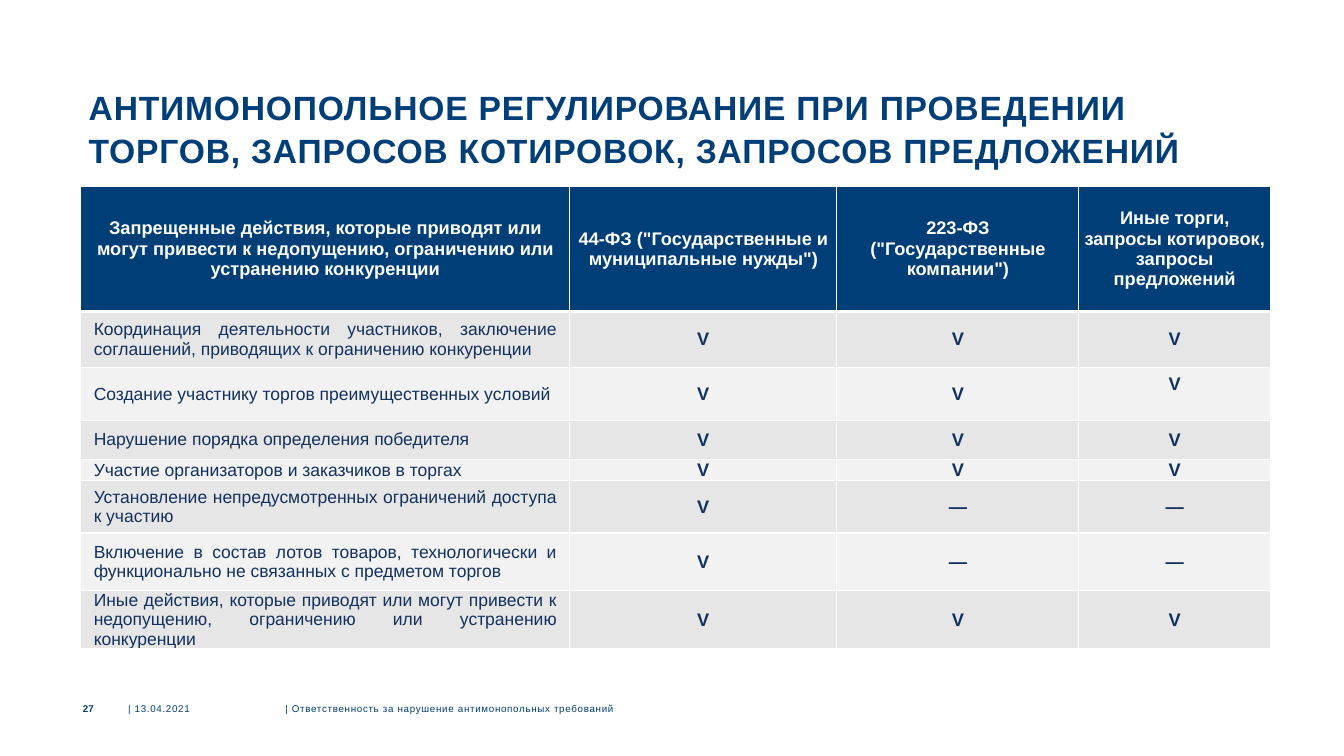
from dataclasses import dataclass

from lxml.etree import SubElement
from pptx import Presentation
from pptx.dml.color import RGBColor
from pptx.enum.text import MSO_ANCHOR as Anchor, PP_ALIGN as Align
from pptx.oxml import parse_xml
from pptx.oxml.ns import nsdecls, qn
from pptx.slide import Slide
from pptx.table import Table, _Cell as Cell
from pptx.text.text import _Paragraph as Paragraph
from pptx.util import Inches, Pt

NAVY = RGBColor(0x00, 0x3E, 0x77)
INK = RGBColor(0x13, 0x31, 0x5E)
GREY = RGBColor(0xE7, 0xE6, 0xE6)
WHITE = RGBColor(0xFF, 0xFF, 0xFF)


@dataclass
class Caption:
    text: str
    left: float
    top: float
    width: float
    height: float
    size: float = 7
    bold: bool = False
    align: Align = Align.LEFT
    anchor: Anchor = Anchor.MIDDLE
    inset_x: float = 0
    inset_y: float = 0
    spacing: float = 0
    line_height: float | None = None


@dataclass
class Offence:
    text: str
    height: float
    marks: str


@dataclass
class CellStyle:
    size: float
    color: RGBColor
    fill: RGBColor
    bold: bool = True
    align: Align = Align.CENTER
    inset_x: float = 0.13
    inset_top: float = 0
    inset_bottom: float = 0
    opacity: int = 100
    rule_below: float = 1


CAPTIONS = [
    Caption("АНТИМОНОПОЛЬНОЕ РЕГУЛИРОВАНИЕ ПРИ ПРОВЕДЕНИИ ТОРГОВ, "
            "ЗАПРОСОВ КОТИРОВОК, ЗАПРОСОВ ПРЕДЛОЖЕНИЙ",
            0.79, 0.79, 11.76, 0.87, size=24, bold=True, anchor=Anchor.TOP,
            inset_x=0.09, inset_y=0.04, spacing=0.6, line_height=31),
    Caption("| 13.04.2021", 1.27, 6.95, 1.53, 0.16, spacing=0.5),
    Caption("| Ответственность за нарушение антимонопольных требований",
            2.83, 6.95, 5.88, 0.16, spacing=0.5),
    Caption("27", 0.79, 6.95, 0.14, 0.16, bold=True, align=Align.RIGHT),
]

HEADER_HEIGHT = 1.24
COLUMN_WIDTHS = [4.85, 2.65, 2.4, 1.9]
HEADINGS = [
    "Запрещенные действия, которые приводят или могут привести к недопущению, "
    "ограничению или устранению конкуренции",
    '44-ФЗ ("Государственные и муниципальные нужды")',
    '223-ФЗ ("Государственные компании")',
    "Иные торги, запросы котировок, запросы предложений",
]
OFFENCES = [
    Offence("Координация деятельности участников, заключение соглашений, "
            "приводящих к ограничению конкуренции", 0.56, "VVV"),
    Offence("Создание участнику торгов преимущественных условий", 0.52, "VVV"),
    Offence("Нарушение порядка определения победителя", 0.39, "VVV"),
    Offence("Участие организаторов и заказчиков в торгах", 0.21, "VVV"),
    Offence("Установление непредусмотренных ограничений доступа к участию",
            0.52, "V――"),
    Offence("Включение в состав лотов товаров, технологически и функционально "
            "не связанных с предметом торгов", 0.57, "V――"),
    Offence("Иные действия, которые приводят или могут привести к недопущению, "
            "ограничению или устранению конкуренции", 0.56, "VVV"),
]
RAISED_MARK = (2, 3)


def set_font(paragraph: Paragraph, size: float, color: RGBColor, bold: bool) -> None:
    font = paragraph.font
    font.name = "Arial"
    font.size = Pt(size)
    font.bold = bold
    font.color.rgb = color


def add_caption(slide: Slide, caption: Caption) -> None:
    box = slide.shapes.add_textbox(Inches(caption.left), Inches(caption.top),
                                   Inches(caption.width), Inches(caption.height))
    frame = box.text_frame
    frame.word_wrap = True
    frame.vertical_anchor = caption.anchor
    frame.margin_left = frame.margin_right = Inches(caption.inset_x)
    frame.margin_top = frame.margin_bottom = Inches(caption.inset_y)
    paragraph = frame.paragraphs[0]
    paragraph.alignment = caption.align
    if caption.line_height:
        paragraph.line_spacing = Pt(caption.line_height)
    run = paragraph.add_run()
    run.text = caption.text
    if caption.spacing:
        run._r.get_or_add_rPr().set("spc", str(round(caption.spacing * 100)))
    set_font(paragraph, caption.size, NAVY, caption.bold)


def add_borders(cell: Cell, rule_above: float, rule_below: float) -> None:
    properties = cell._tc.get_or_add_tcPr()
    widths = {"lnL": 1, "lnR": 1, "lnT": rule_above, "lnB": rule_below}
    for position, (side, width) in enumerate(widths.items()):
        properties.insert(position, parse_xml(
            f'<a:{side} {nsdecls("a")} w="{Pt(width)}"><a:solidFill>'
            f'<a:srgbClr val="{WHITE}"/></a:solidFill></a:{side}>'))


def fill_cell(cell: Cell, text: str, style: CellStyle, rule_above: float = 1) -> None:
    cell.text = text
    cell.vertical_anchor = Anchor.MIDDLE
    cell.margin_left = cell.margin_right = Inches(style.inset_x)
    cell.margin_top = Inches(style.inset_top)
    cell.margin_bottom = Inches(style.inset_bottom)
    paragraph = cell.text_frame.paragraphs[0]
    paragraph.alignment = style.align
    set_font(paragraph, style.size, style.color, style.bold)
    cell.fill.solid()
    cell.fill.fore_color.rgb = style.fill
    if style.opacity < 100:
        color = cell._tc.tcPr.find(f"{qn('a:solidFill')}/{qn('a:srgbClr')}")
        SubElement(color, qn("a:alpha")).set("val", str(style.opacity * 1000))
    add_borders(cell, rule_above, style.rule_below)


def fill_header(table: Table) -> None:
    for column, heading in enumerate(HEADINGS):
        inset_x, inset_y = (0.05, 0.04) if column else (0.13, 0.05)
        fill_cell(table.cell(0, column), heading,
                  CellStyle(13, WHITE, NAVY, inset_x=inset_x, inset_top=inset_y,
                            inset_bottom=inset_y, rule_below=3))


def fill_offence(table: Table, row: int, offence: Offence) -> None:
    opacity = 100 if row % 2 else 50
    rule_above = 3 if row == 1 else 1
    fill_cell(table.cell(row, 0), offence.text,
              CellStyle(12.5, INK, GREY, bold=False, align=Align.JUSTIFY,
                        opacity=opacity), rule_above)
    for column, mark in enumerate(offence.marks, start=1):
        lift = 0.2 if (row, column) == RAISED_MARK else 0
        fill_cell(table.cell(row, column), mark,
                  CellStyle(13, INK, GREY, inset_bottom=lift, opacity=opacity),
                  rule_above)


def add_offence_table(slide: Slide) -> None:
    heights = [HEADER_HEIGHT] + [offence.height for offence in OFFENCES]
    table = slide.shapes.add_table(
        len(heights), len(COLUMN_WIDTHS), Inches(0.8), Inches(1.85),
        Inches(sum(COLUMN_WIDTHS)), Inches(sum(heights))).table
    for column, width in zip(table.columns, COLUMN_WIDTHS):
        column.width = Inches(width)
    for row, height in zip(table.rows, heights):
        row.height = Inches(height)
    fill_header(table)
    for number, offence in enumerate(OFFENCES, start=1):
        fill_offence(table, number, offence)


def main() -> None:
    presentation = Presentation()
    presentation.slide_width = Inches(13.33)
    presentation.slide_height = Inches(7.5)
    slide = presentation.slides.add_slide(presentation.slide_layouts[6])
    add_offence_table(slide)
    for caption in CAPTIONS:
        add_caption(slide, caption)
    presentation.save("out.pptx")


if __name__ == "__main__":
    main()
